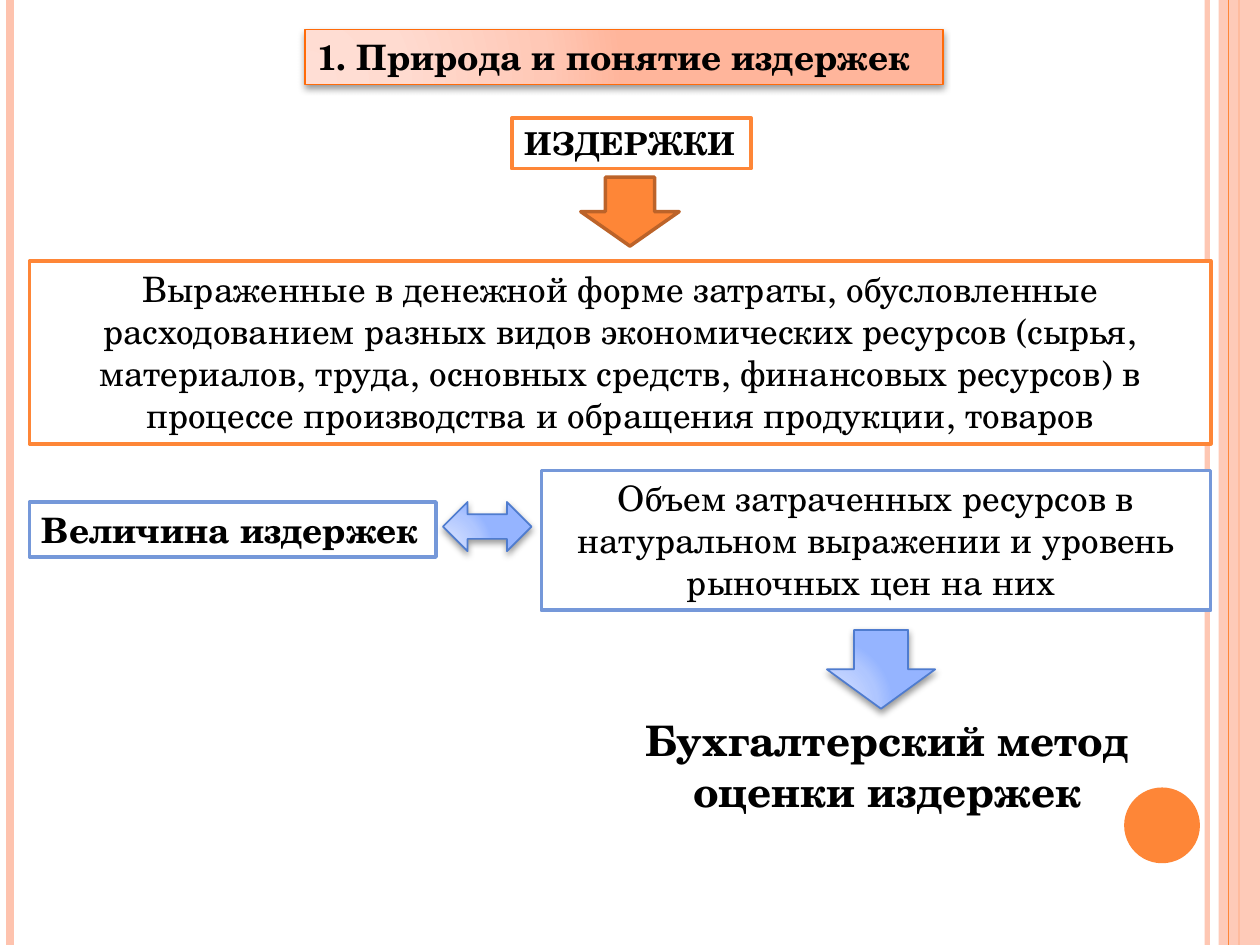
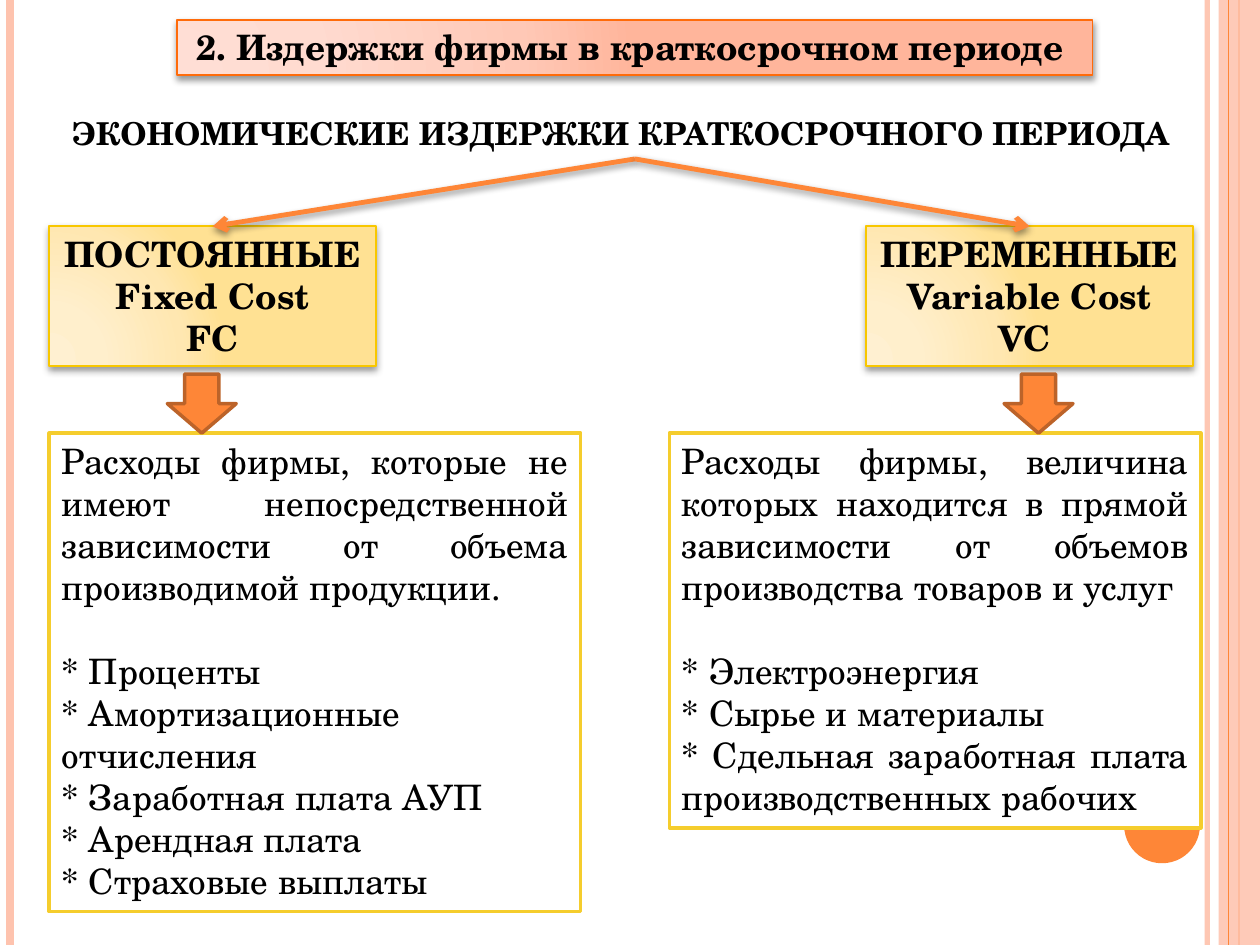
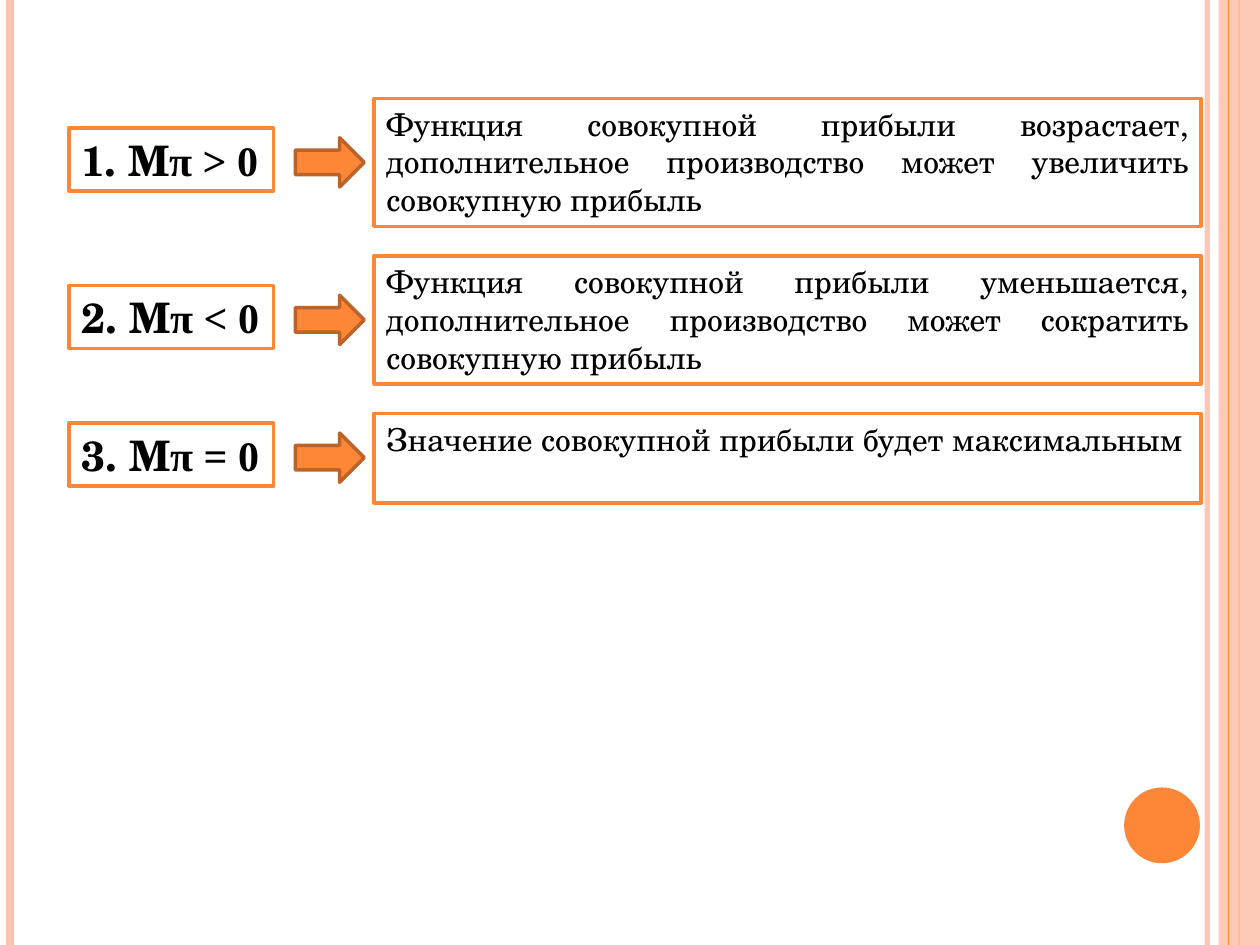
from lxml import etree
from pptx import Presentation
from pptx import util as u
from pptx.dml.color import RGBColor
from pptx.enum import shapes, text
from pptx.oxml import parse_xml
from pptx.oxml.ns import nsdecls, qn

COLUMNS, ROWS = 128, 96
FONT, MATH_FONT = "TeX Gyre Schola", "Times New Roman"
BLACK, WHITE = "000000", "FFFFFF"
ORANGE, DARK_ORANGE, PEACH = "FE8637", "BC6329", "FEC3AE"
BLUE, YELLOW = "7598D9", "F5CD2D"

# Glossy looks: line colour and gradient stops
GLOSS_STOPS = (0, 30, 75, 100)
PEACH_GLOSS = ("FF6B0A", ("FFDED5", "FFDBD0", "FFC8B6", "FFB59B"))
BLUE_GLOSS = ("4F7CCF", ("CFDCFF", "CBD9FF", "AFC6FF", "95B4FF"))
GOLD_GLOSS = ("F8C700", ("FFF0D1", "FFEFCC", "FFE7B1", "FFE193"))

SHAPE = shapes.MSO_SHAPE
LEFT, CENTER, JUSTIFY = (text.PP_ALIGN.LEFT, text.PP_ALIGN.CENTER,
                         text.PP_ALIGN.JUSTIFY)

# Heights of text boxes, in rows
LINE_18, LINE_20, LINE_24, THREE_LINES = 5.15, 5.6, 6.4, 14.2


def rgb(value):
    return RGBColor.from_string(value)


def set_alpha(element, percent):
    color = element.spPr.find(".//" + qn("a:srgbClr"))
    etree.SubElement(color, qn("a:alpha"), val=str(percent * 1000))


def set_effects(element, shadow=None):
    """Leave no shadow, or one below given as (opacity %, distance in points)."""
    effects = etree.SubElement(element.spPr, qn("a:effectLst"))
    if shadow:
        opacity, distance = shadow
        effects.append(parse_xml(
            f'<a:outerShdw {nsdecls("a")} blurRad="{u.Pt(4)}" dist="{u.Pt(distance)}"'
            f' dir="5400000" rotWithShape="0"><a:srgbClr val="{BLACK}">'
            f'<a:alpha val="{opacity * 1000}"/></a:srgbClr></a:outerShdw>'))


def set_gradient(element, colors):
    stops = "".join(
        f'<a:gs pos="{stop * 1000}"><a:srgbClr val="{color}"/></a:gs>'
        for stop, color in zip(GLOSS_STOPS, colors))
    gradient = parse_xml(
        f'<a:gradFill {nsdecls("a")} rotWithShape="1"><a:gsLst>{stops}</a:gsLst>'
        '<a:path path="circle"><a:fillToRect l="5000" t="100000" r="120000" b="10000"/>'
        '</a:path></a:gradFill>')
    element.spPr.find(qn("a:prstGeom")).addnext(gradient)


class Slides:
    def __init__(self):
        self.deck = Presentation()
        self.deck.slide_width, self.deck.slide_height = u.Inches(10), u.Inches(7.5)
        self.cell = self.deck.slide_width / COLUMNS
        self.page = None

    def place(self, *cells):
        return [round(value * self.cell) for value in cells]

    def new_page(self):
        """Start a slide with the side bands and the corner disc."""
        self.page = self.deck.slides.add_slide(self.deck.slide_layouts[6])
        self.rule(122.65, PEACH, 3, alpha=93)
        self.rule(1.05, PEACH, 4.5)
        self.rule(125.85, ORANGE, 1.5)
        band = self.shape(SHAPE.RECTANGLE, (123.8, 0, 4.2, ROWS), PEACH)
        set_alpha(band._element, 87)
        self.rule(124.8, ORANGE, 0.75)
        self.shape(SHAPE.OVAL, (114.2, 80, 7.7, 7.7), ORANGE)

    def connector(self, ends, color, width):
        line = self.page.shapes.add_connector(
            shapes.MSO_CONNECTOR.STRAIGHT, *self.place(*ends))
        line.line.color.rgb = rgb(color)
        line.line.width = u.Pt(width)
        return line

    def rule(self, column, color, width, alpha=None):
        line = self.connector((column, 0, column, ROWS), color, width)
        set_effects(line._element)
        if alpha:
            set_alpha(line._element, alpha)

    def arrow(self, start, end):
        """Join the bottom of one box to the top of another."""
        line = self.connector((0, 0, 1, 1), ORANGE, 2.75)
        line.begin_connect(start, 2)
        line.end_connect(end, 0)
        outline = line._element.spPr.find(qn("a:ln"))
        etree.SubElement(outline, qn("a:tailEnd"), type="arrow")
        set_effects(line._element, shadow=(42, 1.6))

    def shape(self, kind, cells, fill, outline=None, width=2):
        shape = self.page.shapes.add_shape(kind, *self.place(*cells))
        shape.fill.solid()
        shape.fill.fore_color.rgb = rgb(fill)
        if outline:
            shape.line.color.rgb = rgb(outline)
            shape.line.width = u.Pt(width)
        else:
            shape.line.fill.background()
        shape.shadow.inherit = False
        return shape

    def glossy(self, kind, cells, look):
        outline, colors = look
        shape = self.page.shapes.add_shape(kind, *self.place(*cells))
        set_gradient(shape._element, colors)
        shape.line.color.rgb = rgb(outline)
        shape.line.width = u.Pt(1)
        set_effects(shape._element, shadow=(40, 2))
        return shape

    def block_arrow(self, kind, cells):
        self.shape(kind, cells, ORANGE, DARK_ORANGE)

    def set_text(self, box, lines, size=20, bold=False, align=LEFT):
        frame = box.text_frame
        frame.word_wrap = True
        frame.vertical_anchor = text.MSO_ANCHOR.TOP
        for index, line in enumerate(lines):
            para = frame.paragraphs[0] if index == 0 else frame.add_paragraph()
            para.add_run().text = line
            para.alignment = align
            para.font.name, para.font.size = FONT, u.Pt(size)
            para.font.bold, para.font.color.rgb = bold, rgb(BLACK)
        return box

    def framed(self, cells, lines, outline=ORANGE, **style):
        box = self.shape(SHAPE.RECTANGLE, cells, WHITE, outline)
        return self.set_text(box, lines, **style)

    def plate(self, cells, lines, look, align=CENTER):
        box = self.glossy(SHAPE.RECTANGLE, cells, look)
        return self.set_text(box, lines, bold=True, align=align)

    def caption(self, cells, lines, **style):
        box = self.page.shapes.add_textbox(*self.place(*cells))
        return self.set_text(box, lines, bold=True, **style)


def nature_of_costs(slides):
    slides.new_page()
    slides.plate((31, 3, 64.8, LINE_20), ["1. Природа и понятие издержек"],
                 PEACH_GLOSS, align=LEFT)

    # Definition
    slides.framed((52, 12, 24.3, LINE_18), ["ИЗДЕРЖКИ"], size=18, bold=True)
    slides.block_arrow(SHAPE.DOWN_ARROW, (59, 18, 10, 7))
    slides.framed((3, 26.5, 120, 18.6), [
        "Выраженные в денежной форме затраты, обусловленные расходованием разных "
        "видов экономических ресурсов (сырья, материалов, труда, основных средств, "
        "финансовых ресурсов) в процессе производства и обращения продукции, товаров",
    ], align=CENTER)

    # Size of costs and how it is valued
    slides.framed((3, 51, 41.3, LINE_20), ["Величина издержек"], BLUE, bold=True)
    slides.glossy(SHAPE.LEFT_RIGHT_ARROW, (45, 51, 9, 5), BLUE_GLOSS)
    slides.framed((55, 47.8, 68, THREE_LINES), [
        "Объем затраченных ресурсов в натуральном выражении и уровень "
        "рыночных цен на них "], BLUE, align=CENTER)
    slides.glossy(SHAPE.DOWN_ARROW, (84, 64, 11, 8), BLUE_GLOSS)
    slides.caption((64, 72, 53.5, 11.6),
                   ["Бухгалтерский метод ", "оценки издержек "],
                   size=24, align=CENTER)


def short_run_costs(slides):
    slides.new_page()
    slides.plate((18, 2, 93, LINE_20),
                 ["2. Издержки фирмы в краткосрочном периоде "], PEACH_GLOSS)
    heading = slides.caption((6, 11, 117, LINE_18),
                             ["ЭКОНОМИЧЕСКИЕ ИЗДЕРЖКИ КРАТКОСРОЧНОГО ПЕРИОДА"], size=18)

    # Each branch: plate column, its lines, arrow column,
    # description column and height, definition, examples and their alignment
    branches = [
        (5, ["ПОСТОЯННЫЕ", "Fixed Cost", "FC"], 17, 5, 48.6,
         "Расходы фирмы, которые не имеют непосредственной зависимости "
         "от объема производимой продукции. ",
         ["* Проценты", "* Амортизационные отчисления", "* Заработная плата АУП",
          "* Арендная плата", "* Страховые выплаты"], LEFT),
        (88, ["ПЕРЕМЕННЫЕ", "Variable Cost", "VC "], 102, 68, 40.1,
         "Расходы фирмы, величина которых находится в прямой зависимости "
         "от объемов производства товаров и услуг ",
         ["* Электроэнергия ", "* Сырье и материалы",
          "* Сдельная заработная плата производственных рабочих "], JUSTIFY),
    ]
    for (plate_column, name, arrow_column, column, height,
         definition, examples, align) in branches:
        plate = slides.plate((plate_column, 23, 33.2, THREE_LINES), name, GOLD_GLOSS)
        slides.arrow(heading, plate)
        box = slides.framed((column, 44, 54, height), [definition, *examples],
                            YELLOW, align=align)
        paras = box.text_frame.paragraphs
        paras[0].alignment = JUSTIFY
        paras[1].space_before = u.Pt(24)
        slides.block_arrow(SHAPE.DOWN_ARROW, (arrow_column, 38, 7, 6))


def marginal_profit(slides):
    slides.new_page()
    # Each case: label row, number, condition, height of the outcome, outcome
    cases = [
        (13, "1. М", "π > 0", 13,
         "Функция совокупной прибыли возрастает, дополнительное производство "
         "может увеличить совокупную прибыль"),
        (29, "2. М", "π < 0", 13,
         "Функция совокупной прибыли уменьшается, дополнительное производство "
         "может сократить совокупную прибыль"),
        (43, "3. М", "π = 0", 9.1,
         "Значение совокупной прибыли будет максимальным"),
    ]
    for index, (row, number, condition, height, outcome) in enumerate(cases):
        label = slides.framed((7, row, 20.8, LINE_24), [number], size=24, bold=True)
        span = label.text_frame.paragraphs[0].add_run()
        span.text = condition
        span.font.name = MATH_FONT
        slides.block_arrow(SHAPE.RIGHT_ARROW, (30, row + 1, 7, 5))
        slides.framed((38, 10 + 16 * index, 84, height), [outcome],
                      size=18, align=JUSTIFY)


def main():
    slides = Slides()
    nature_of_costs(slides)
    short_run_costs(slides)
    marginal_profit(slides)
    slides.deck.save("out.pptx")


if __name__ == "__main__":
    main()
